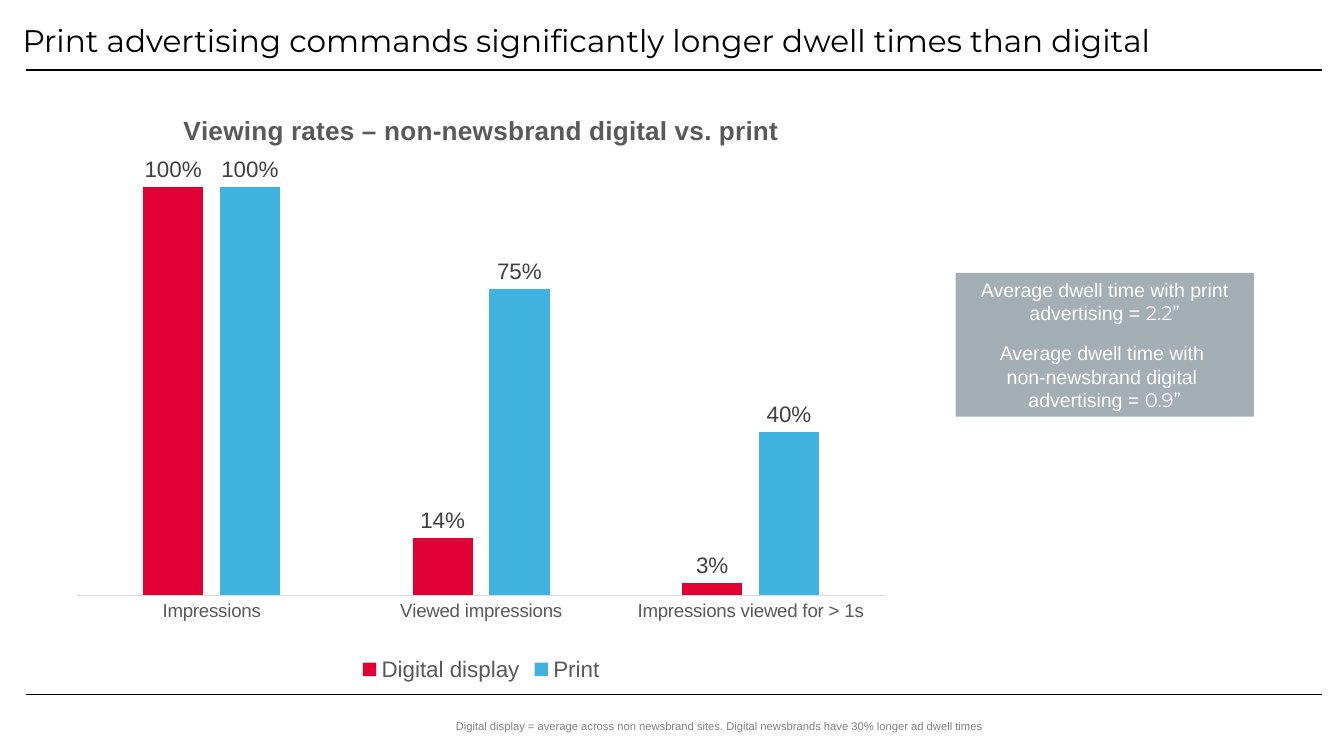
from lxml.etree import SubElement
from pptx import Presentation
from pptx.chart.data import CategoryChartData
from pptx.dml.color import RGBColor
from pptx.enum.chart import XL_CHART_TYPE, XL_LABEL_POSITION, XL_LEGEND_POSITION, XL_TICK_LABEL_POSITION, XL_TICK_MARK
from pptx.enum.shapes import MSO_CONNECTOR, MSO_SHAPE
from pptx.enum.text import MSO_ANCHOR, PP_ALIGN
from pptx.oxml import parse_xml
from pptx.oxml.ns import nsdecls, qn
from pptx.util import Inches, Pt

BLACK = RGBColor(0x00, 0x00, 0x00)
WHITE = RGBColor(0xFF, 0xFF, 0xFF)
RED = RGBColor(0xE0, 0x00, 0x34)
BLUE = RGBColor(0x3F, 0xB2, 0xE0)
SLATE = RGBColor(0xA3, 0xAE, 0xB5)
GREY = RGBColor(0x80, 0x80, 0x80)
DARK = RGBColor(0x59, 0x59, 0x59)
LABEL = RGBColor(0x40, 0x40, 0x40)
PALE = RGBColor(0xD9, 0xD9, 0xD9)


def set_font(font, size, color, name="Arial", bold=False):
    font.size = Pt(size)
    font.name = name
    font.bold = bold
    font.color.rgb = color


def add_rule(slide, left, top, width):
    rule = slide.shapes.add_connector(
        MSO_CONNECTOR.STRAIGHT, Inches(left), Inches(top),
        Inches(left + width), Inches(top))
    rule.line.color.rgb = BLACK
    rule.line.width = Pt(0.75)
    SubElement(rule._element.spPr, qn("a:effectLst"))


def add_text(slide, box, text, size, color, name, align, anchor):
    frame = slide.shapes.add_textbox(*map(Inches, box)).text_frame
    frame.word_wrap = True
    frame.vertical_anchor = anchor
    para = frame.paragraphs[0]
    para.text = text
    para.alignment = align
    para.line_spacing = 0.9
    set_font(para.font, size, color, name)


def make_layout(target, **places):
    modes = {"x": "edge", "y": "edge"}
    parts = ['<c:layoutTarget val="inner"/>'] if target else []
    parts += [f'<c:{key}Mode val="{modes.get(key, "factor")}"/>' for key in places]
    parts += [f'<c:{key} val="{value}"/>' for key, value in places.items()]
    return parse_xml(f'<c:layout {nsdecls("c")}><c:manualLayout>'
                     f'{"".join(parts)}</c:manualLayout></c:layout>')


def put_layout(node, layout, index):
    for old in node.findall(qn("c:layout")):
        node.remove(old)
    node.insert(index, layout)


def add_rates(slide, box):
    data = CategoryChartData(number_format="0%")
    data.categories = ["Impressions", "Viewed impressions", "Impressions viewed for > 1s"]
    data.add_series("Digital display", (1, 0.14, 0.03))
    data.add_series("Print", (1, 0.75, 0.4))
    chart = slide.shapes.add_chart(
        XL_CHART_TYPE.COLUMN_CLUSTERED, *map(Inches, box), data).chart
    set_font(chart.font, 10, BLACK)

    chart.has_title = True
    para = chart.chart_title.text_frame.paragraphs[0]
    para.text = "Viewing rates – non-newsbrand digital vs. print"
    set_font(para.font, 14, DARK, bold=True)
    put_layout(chart.chart_title._element, make_layout(False, x=0.144, y=0.032), 1)

    chart.has_legend = True
    chart.legend.position = XL_LEGEND_POSITION.BOTTOM
    chart.legend.include_in_layout = False
    set_font(chart.legend.font, 12, DARK)

    axis = chart.category_axis
    axis.major_tick_mark = XL_TICK_MARK.NONE
    axis.tick_label_position = XL_TICK_LABEL_POSITION.NEXT_TO_AXIS
    axis.format.line.color.rgb = PALE
    axis.format.line.width = Pt(0.75)
    set_font(axis.tick_labels.font, 10, DARK)
    scale = chart.value_axis
    scale.minimum_scale = 0
    scale.maximum_scale = 1
    scale.has_major_gridlines = False
    scale.visible = False

    plot = chart.plots[0]
    plot.vary_by_categories = False
    plot.gap_width = 219
    plot.overlap = -27
    for series, color in zip(plot.series, (RED, BLUE)):
        series.format.fill.solid()
        series.format.fill.fore_color.rgb = color
        labels = series.data_labels
        labels.show_value = True
        labels.number_format = "0%"
        labels.number_format_is_linked = False
        labels.position = XL_LABEL_POSITION.OUTSIDE_END
        set_font(labels.font, 12, LABEL)
    area = chart._chartSpace.chart.plotArea
    put_layout(area, make_layout(True, x=0.024, y=0.163, w=0.952, h=0.684), 0)


def add_callout(slide, box, facts):
    card = slide.shapes.add_shape(MSO_SHAPE.ROUNDED_RECTANGLE, *map(Inches, box))
    card.adjustments[0] = 0
    card.shadow.inherit = False
    card.fill.solid()
    card.fill.fore_color.rgb = SLATE
    card.line.fill.background()
    frame = card.text_frame
    frame.word_wrap = True
    frame.vertical_anchor = MSO_ANCHOR.MIDDLE
    frame.margin_left = frame.margin_right = frame.margin_top = frame.margin_bottom = 0
    for index, (text, value) in enumerate(facts):
        para = frame.add_paragraph() if index else frame.paragraphs[0]
        para.alignment = PP_ALIGN.CENTER
        if index:
            para.space_before = Pt(9)
        para.text = text
        for run in para.runs:
            set_font(run.font, 10.5, WHITE)
        run = para.add_run()
        run.text = value
        set_font(run.font, 10.5, WHITE, "Montserrat")


def build():
    deck = Presentation()
    deck.slide_width = Inches(10)
    deck.slide_height = deck.slide_width * 9 // 16
    slide = deck.slides.add_slide(deck.slide_layouts[6])
    for top in (0.52, 5.17):
        add_rule(slide, 0.19, top, 9.65)
    add_text(slide, (0.07, 0.14, 10.04, 0.39),
             "Print advertising commands significantly longer dwell times than digital",
             16.7, BLACK, "Montserrat", PP_ALIGN.LEFT, MSO_ANCHOR.TOP)
    add_text(slide, (1.27, 5.27, 8.16, 0.28),
             "Digital display = average across non newsbrand sites. "
             "Digital newsbrands have 30% longer ad dwell times",
             6, GREY, "Arial", PP_ALIGN.CENTER, MSO_ANCHOR.MIDDLE)
    add_rates(slide, (0.42, 0.67, 6.32, 4.44))
    add_callout(slide, (7.11, 2.03, 2.22, 1.07), [
        ("Average dwell time with print advertising = ", "2.2”"),
        ("Average dwell time with \vnon-newsbrand digital \vadvertising = ", "0.9”"),
    ])
    deck.save("out.pptx")


if __name__ == "__main__":
    build()
